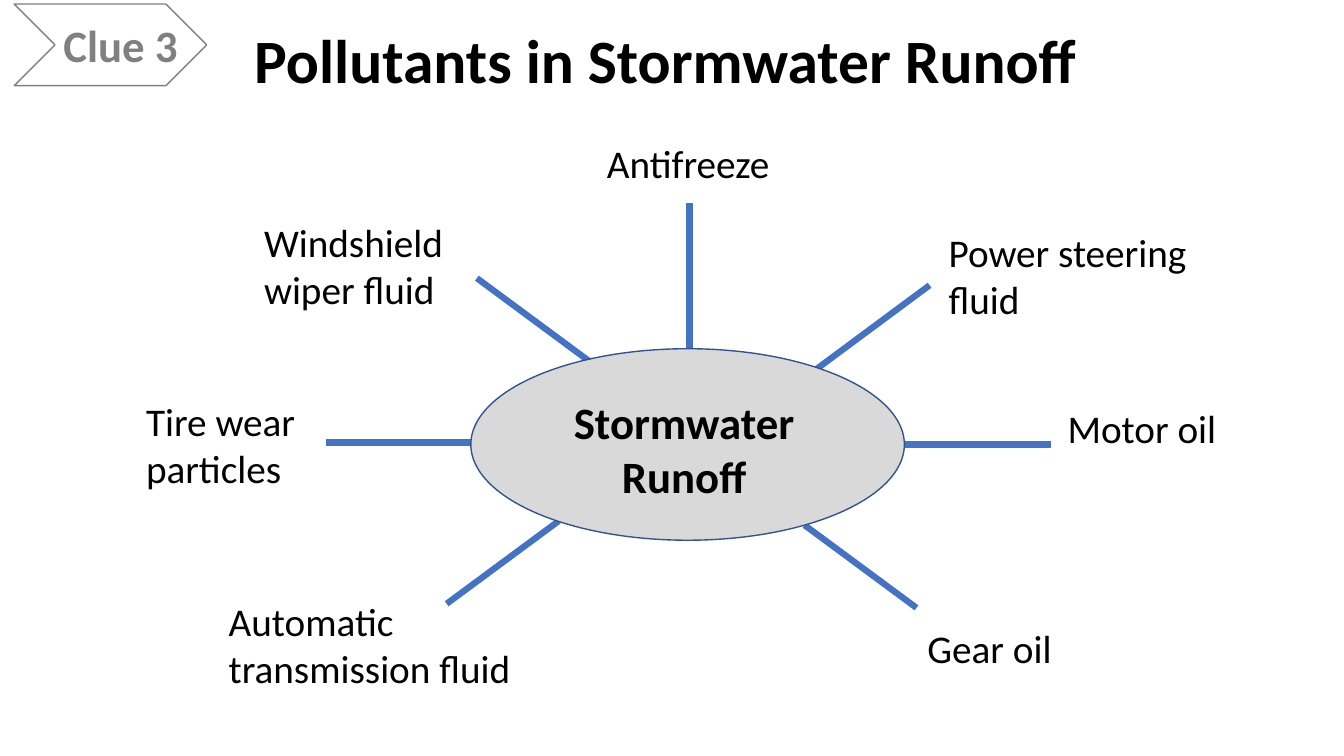
from lxml import etree
from pptx import Presentation
from pptx import util as u
from pptx.dml.color import RGBColor
from pptx.enum import shapes, text
from pptx.oxml import ns

BLUE, BLACK, GRAY = "4472C4", "000000", "808080"

# label, its offset and width, spoke ends; all from the hub's top left corner
SPOKES = [
    ("Power steering fluid", (464, -124, 279), (455, -63, 343, 20)),
    ("Gear oil", (443, 268, 279), (331, 175, 442, 257)),
    ("Automatic transmission fluid", (-250, 242, 355), (87, 171, -24, 253)),
    ("Tire wear particles", (-332, 43, 215), (0, 93, -144, 93)),
    ("Motor oil", (582, 50, 279), (575, 95, 430, 95)),
    ("Windshield wiper fluid", (-215, -134, 285), (6, -70, 117, 12)),
    ("Antifreeze", (51, -213, 329), (217, 0, 217, -145)),
]


def px(n):
    """Scale of 100 px to the inch."""
    return u.Emu(n * 9144)


def color(code):
    return RGBColor.from_string(code)


def write(slide, words, box, size=28, bold=False, ink=BLACK, center=False,
          middle=False, spacing=None):
    frame = slide.shapes.add_textbox(*map(px, box)).text_frame
    frame.word_wrap = True
    if middle:
        frame.vertical_anchor = text.MSO_ANCHOR.MIDDLE
    para = frame.paragraphs[0]
    para.alignment = text.PP_ALIGN.CENTER if center else text.PP_ALIGN.LEFT
    para.line_spacing = spacing
    run = para.add_run()
    run.text = words
    run.font.name, run.font.size = "Calibri", u.Pt(size)
    run.font.bold = bold
    run.font.color.rgb = color(ink)


def draw(slide, kind, box, line, fill=None):
    shape = slide.shapes.add_shape(kind, *map(px, box))
    shape.shadow.inherit = False
    if fill:
        shape.fill.solid()
        shape.fill.fore_color.rgb = color(fill)
    else:
        shape.fill.background()
    shape.line.color.rgb = color(line)
    shape.line.width = u.Pt(1)


def link(slide, ends):
    line = slide.shapes.add_connector(
        shapes.MSO_CONNECTOR.STRAIGHT, *map(px, ends))
    line.line.color.rgb = color(BLUE)
    line.line.width = u.Pt(4.5)
    etree.SubElement(line._element.spPr, ns.qn("a:effectLst"))


def title(slide, box):
    write(slide, "Pollutants in Stormwater Runoff", box, size=44, bold=True,
          center=True, middle=True, spacing=0.9)


def badge(slide, box):
    x, y, w, h = box
    write(slide, "Clue 3", (x + 39, y + 9, 165, 64), size=32, bold=True,
          ink=GRAY)
    draw(slide, shapes.MSO_SHAPE.CHEVRON, box, GRAY)


def wheel(slide, box):
    """Hub ellipse with a labelled spoke for each pollutant."""
    x, y, w, h = box
    for label, (dx, dy, wide), (x1, y1, x2, y2) in SPOKES:
        tall = 104 if len(label) > 12 else 57
        write(slide, label, (x + dx, y + dy, wide, tall),
              center=label == "Antifreeze")
        link(slide, (x + x1, y + y1, x + x2, y + y2))
    draw(slide, shapes.MSO_SHAPE.OVAL, box, "325491", "D9D9D9")
    write(slide, "Stormwater Runoff", (x + 72, y + 41, 279, 118), size=32,
          bold=True, center=True)


def main():
    deck = Presentation()
    deck.slide_width, deck.slide_height = px(1333), px(750)
    slide = deck.slides.add_slide(deck.slide_layouts[6])
    wheel(slide, (467, 346, 430, 190))
    badge(slide, (14, 4, 191, 81))
    title(slide, (189, 22, 942, 82))
    deck.save("out.pptx")


if __name__ == "__main__":
    main()
